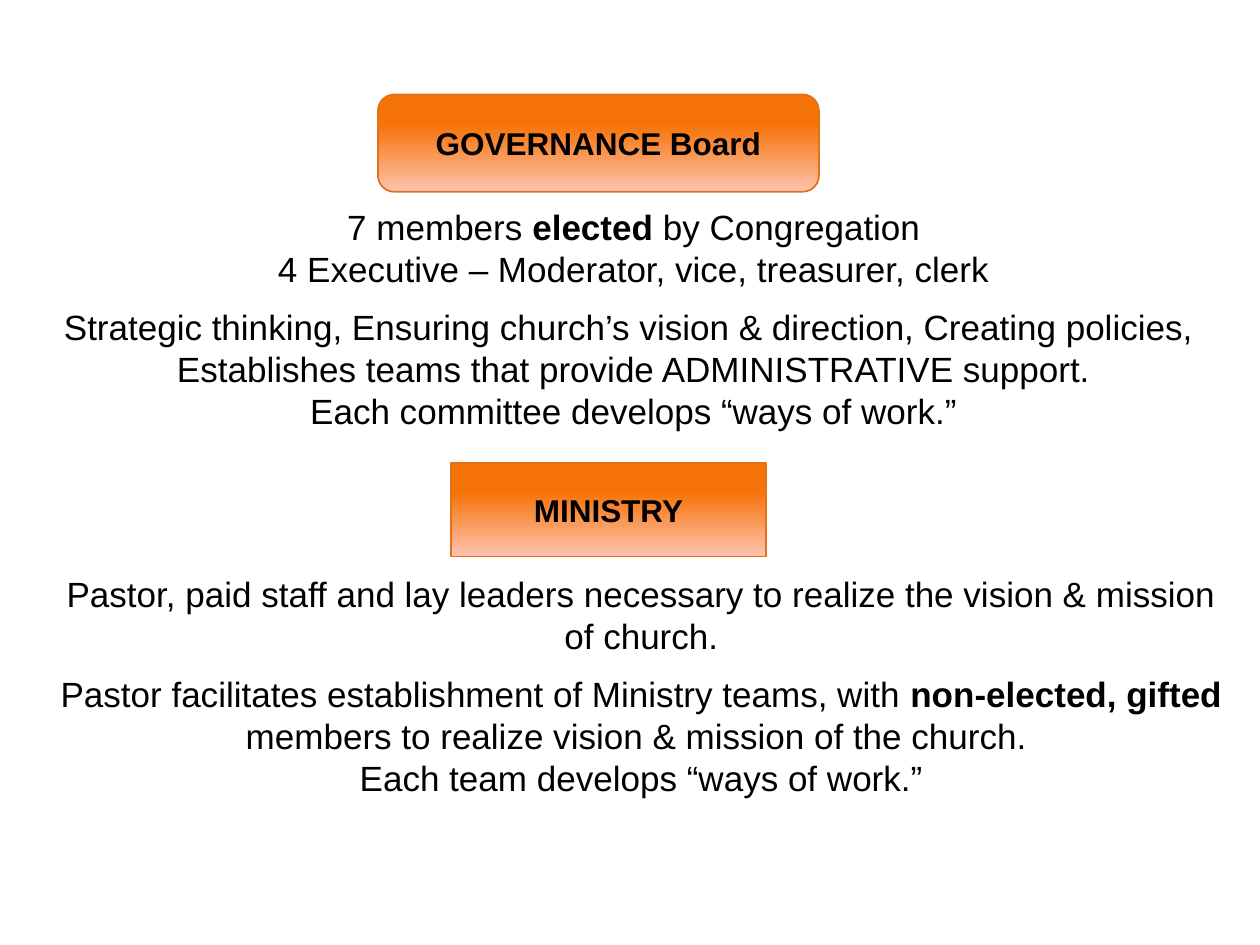
from dataclasses import dataclass
from pptx import Presentation
from pptx.dml.color import RGBColor
from pptx.enum.shapes import MSO_SHAPE
from pptx.enum.text import MSO_ANCHOR, MSO_AUTO_SIZE, PP_ALIGN
from pptx.util import Inches, Pt


@dataclass(frozen=True)
class Theme:
    font: str = "Arial"
    ink: str = "000000"
    edge: str = "E27218"
    fade: tuple = ((0.31, "F67309"), (1, "FEC3B0"))
    head: int = 18
    body: int = 20
    gap: int = 9
    pull: float = -0.31


THEME = Theme()
WIDE, HIGH = Inches(10), Inches(7.5)


def scale(box):
    """Turn shares of the slide into lengths."""
    return [round(part * side) for part, side in zip(box, (WIDE, HIGH) * 2)]


def write(para, parts, size):
    """Fill a centred paragraph; every second part is bold."""
    para.alignment = PP_ALIGN.CENTER
    for spot, text in enumerate(parts):
        run = para.add_run()
        run.text = text
        form = {"name": THEME.font, "size": Pt(size), "bold": spot % 2 == 1}
        for key, value in form.items():
            setattr(run.font, key, value)
        run.font.color.rgb = RGBColor.from_string(THEME.ink)


def banner(slide, box, kind, text):
    shape = slide.shapes.add_shape(kind, *scale(box))
    shape.shadow.inherit = False
    shape.fill.gradient()
    shape.fill.gradient_angle = 270
    for stop, (place, tint) in zip(shape.fill.gradient_stops, THEME.fade):
        stop.position = place
        stop.color.rgb = RGBColor.from_string(tint)
    shape.line.color.rgb = RGBColor.from_string(THEME.edge)
    shape.line.width = Pt(1)
    frame = shape.text_frame
    frame.vertical_anchor = MSO_ANCHOR.MIDDLE
    write(frame.paragraphs[0], ("", text), THEME.head)


def detail(slide, box, groups):
    """Set groups of lines, a gap between groups, the last line pulled left."""
    frame = slide.shapes.add_textbox(*scale(box)).text_frame
    form = {"word_wrap": True, "auto_size": MSO_AUTO_SIZE.SHAPE_TO_FIT_TEXT}
    for key, value in form.items():
        setattr(frame, key, value)
    para = None
    for group in groups:
        for row, parts in enumerate(group):
            first = para is None
            para = frame.paragraphs[0] if first else frame.add_paragraph()
            if row == 0 and not first:
                para.space_before = Pt(THEME.gap)
            write(para, parts, THEME.body)
    para._p.get_or_add_pPr().set("indent", str(Inches(THEME.pull)))


BOARD = (
    (
        ("7 members", " elected ", "by Congregation"),
        ("4 Executive – Moderator, vice, treasurer, clerk",),
    ),
    (
        ("Strategic thinking, Ensuring church’s vision & direction, Creating policies, ",),
        ("Establishes teams that provide ADMINISTRATIVE support.",),
        ("Each committee develops “ways of work.”",),
    ),
)
STAFF = (
    (
        ("Pastor, paid staff and lay leaders necessary to realize "
         "the vision & mission of church.",),
    ),
    (
        ("Pastor facilitates establishment of Ministry teams, with ",
         "non-elected, gifted ",
         "members to realize vision & mission of the church. "),
        ("Each team develops “ways of work.”",),
    ),
)


def main():
    deck = Presentation()
    deck.slide_width, deck.slide_height = WIDE, HIGH
    slide = deck.slides.add_slide(deck.slide_layouts[6])
    banner(slide, (0.3, 0.1, 0.35, 0.103), MSO_SHAPE.ROUNDED_RECTANGLE,
           "GOVERNANCE Board")
    banner(slide, (0.358, 0.49, 0.25, 0.099), MSO_SHAPE.RECTANGLE, "MINISTRY")
    detail(slide, (0.025, 0.211, 0.956, 0.256), BOARD)
    detail(slide, (0.038, 0.599, 0.942, 0.256), STAFF)
    deck.save("out.pptx")


if __name__ == "__main__":
    main()
